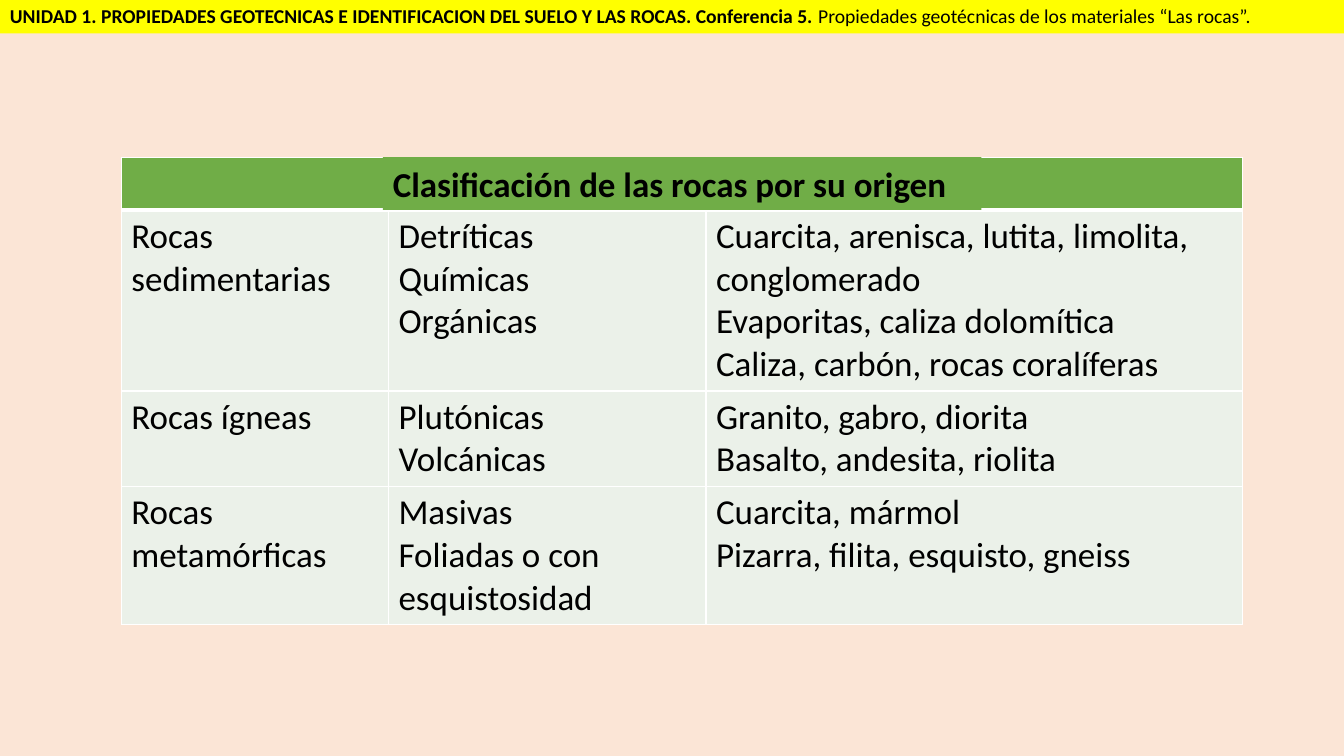
import dataclasses

import pptx
import pptx.dml.color
import pptx.oxml.ns
import pptx.util
from lxml import etree

Pt = pptx.util.Pt


@dataclasses.dataclass(frozen=True)
class Theme:
    """Colours, font and type sizes of the slide."""
    background: str = "FBE5D6"
    banner: str = "FFFF00"
    header: str = "70AD47"
    body: str = "EBF1E9"
    border: str = "FFFFFF"
    text: str = "000000"
    font: str = "Calibri"
    table_size: float = 25
    banner_size: float = 14


THEME = Theme()

BANNER_BOLD = ("UNIDAD 1. PROPIEDADES GEOTECNICAS E IDENTIFICACION DEL SUELO "
               "Y LAS ROCAS. Conferencia 5. ")
BANNER_PLAIN = "Propiedades geotécnicas de los materiales “Las rocas”."
TABLE_TITLE = "Clasificación de las rocas por su origen"
COLUMN_WIDTHS = (190.8, 226.8, 383.04)
ROW_HEIGHTS = (37.8, 129.2, 67.8, 98.6)
ROCKS = (
    (["Rocas sedimentarias"],
     ["Detríticas", "Químicas", "Orgánicas"],
     ["Cuarcita, arenisca, lutita, limolita, conglomerado",
      "Evaporitas, caliza dolomítica",
      "Caliza, carbón, rocas coralíferas"]),
    (["Rocas ígneas"],
     ["Plutónicas", "Volcánicas"],
     ["Granito, gabro, diorita", "Basalto, andesita, riolita"]),
    (["Rocas metamórficas"],
     ["Masivas", "Foliadas o con esquistosidad"],
     ["Cuarcita, mármol", "Pizarra, filita, esquisto, gneiss"]),
)


def paint(fill, color):
    """Give a fill one solid colour."""
    fill.solid()
    fill.fore_color.rgb = pptx.dml.color.RGBColor.from_string(color)


def add_text(paragraph, text, size=THEME.table_size, bold=False, color=THEME.text):
    """Add one formatted run to a paragraph."""
    run = paragraph.add_run()
    run.text = text
    run.font.name = THEME.font
    run.font.size = Pt(size)
    run.font.bold = bold
    run.font.color.rgb = pptx.dml.color.RGBColor.from_string(color)


def add_label(slide, left, top, width, height, color):
    """Add a filled text box and return its first paragraph."""
    shape = slide.shapes.add_textbox(Pt(left), Pt(top), Pt(width), Pt(height))
    paint(shape.fill, color)
    shape.text_frame.word_wrap = True
    return shape.text_frame.paragraphs[0]


def set_borders(cell, bottom):
    """Draw the four borders of a table cell."""
    properties = cell._tc.get_or_add_tcPr()
    for side, width in (("L", 1), ("R", 1), ("T", 1), ("B", bottom)):
        line = etree.SubElement(properties, pptx.oxml.ns.qn(f"a:ln{side}"), w=str(Pt(width)))
        fill = etree.SubElement(line, pptx.oxml.ns.qn("a:solidFill"))
        etree.SubElement(fill, pptx.oxml.ns.qn("a:srgbClr"), val=THEME.border)


def add_rock_table(slide, left, top, width, height):
    """Build the table of rocks under its empty header row."""
    table = slide.shapes.add_table(
        len(ROW_HEIGHTS), len(COLUMN_WIDTHS), Pt(left), Pt(top), Pt(width), Pt(height)).table
    for column, column_width in zip(table.columns, COLUMN_WIDTHS):
        column.width = Pt(column_width)
    for row, row_height in zip(table.rows, ROW_HEIGHTS):
        row.height = Pt(row_height)
    for cell in table.rows[0].cells:
        set_borders(cell, bottom=3)
        paint(cell.fill, THEME.header)
    for row_index, groups in enumerate(ROCKS, start=1):
        for column_index, lines in enumerate(groups):
            cell = table.cell(row_index, column_index)
            set_borders(cell, bottom=1)
            paint(cell.fill, THEME.body)
            for index, line in enumerate(lines):
                frame = cell.text_frame
                paragraph = frame.add_paragraph() if index else frame.paragraphs[0]
                add_text(paragraph, line)


def add_table_title(slide, left, top, width, height):
    """Place the table title over the header row."""
    add_text(add_label(slide, left, top, width, height, THEME.header), TABLE_TITLE, bold=True)


def add_banner(slide, left, top, width, height):
    """Place the course banner."""
    paragraph = add_label(slide, left, top, width, height, THEME.banner)
    add_text(paragraph, BANNER_BOLD, size=THEME.banner_size, bold=True)
    add_text(paragraph, BANNER_PLAIN, size=THEME.banner_size)


def main():
    """Build and save the presentation."""
    presentation = pptx.Presentation()
    presentation.slide_width = Pt(960)
    presentation.slide_height = Pt(540)
    slide = presentation.slides.add_slide(presentation.slide_layouts[6])
    paint(slide.background.fill, THEME.background)
    add_rock_table(slide, 86.7, 112.3, sum(COLUMN_WIDTHS), sum(ROW_HEIGHTS))
    add_table_title(slide, 273.5, 112.3, 427.5, 37.7)
    add_banner(slide, 0, -0.5, 960, 24.3)
    presentation.save("out.pptx")


if __name__ == "__main__":
    main()
